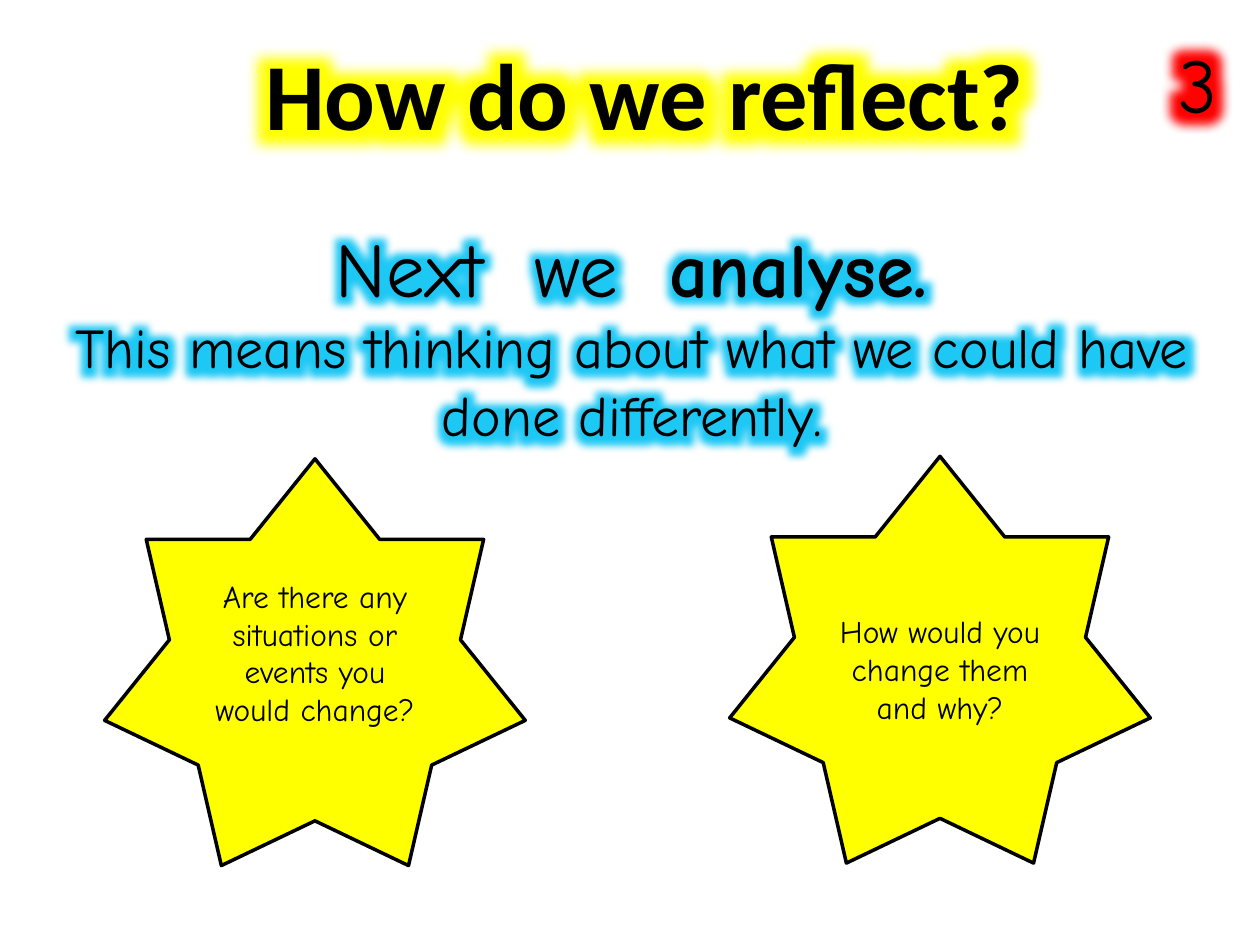
import pptx
import pptx.util
import pptx.dml.color
import pptx.enum.shapes
import pptx.enum.text
import pptx.oxml
import pptx.oxml.ns
from dataclasses import dataclass

Cm, Pt = pptx.util.Cm, pptx.util.Pt
RGB = pptx.dml.color.RGBColor.from_string
ALIGN = pptx.enum.text.PP_ALIGN
ANCHOR = pptx.enum.text.MSO_ANCHOR


@dataclass(frozen=True)
class Theme:
    ink: str = "000000"
    yellow: str = "FFFF00"
    red: str = "FF0000"
    blue: str = "1EC8F5"
    heading: str = "Calibri"
    body: str = "Comic Neue"
    title: int = 54
    large: int = 44
    medium: int = 32
    small: int = 18


T = Theme()


def add_run(p, text, size, font=T.body, bold=False, glow=None):
    """Add a formatted run; glow is a (colour, radius in points) pair."""
    r = p.add_run()
    r.text = text
    for name, value in {"size": Pt(size), "name": font, "bold": bold}.items():
        setattr(r.font, name, value)
    r.font.color.rgb = RGB(T.ink)
    if glow:
        colour, radius = glow
        effect = pptx.oxml.parse_xml(
            f'<a:effectLst {pptx.oxml.ns.nsdecls("a")}><a:glow rad="{Pt(radius)}">'
            f'<a:srgbClr val="{colour}"/></a:glow></a:effectLst>')
        fill = r.font._element.find(pptx.oxml.ns.qn("a:solidFill"))
        fill.addnext(effect)


prs = pptx.Presentation()
prs.slide_width, prs.slide_height = Cm(25.4), Cm(19.05)
s = prs.slides.add_slide(prs.slide_layouts[6])

# Glowing text: box, alignment, glow, then paragraphs of (text, size, font, bold)
text_boxes = [
    ((1.3, 0.61, 23.39, 2.57), ALIGN.CENTER, (T.yellow, 30),
     [[("How do we reflect?", T.title, T.heading, True)]]),
    ((23.5, 0.61, 1.22, 2.13), ALIGN.LEFT, (T.red, 28),
     [[("3", T.large, T.body, False)]]),
    ((0.08, 4.32, 25.32, 4.88), ALIGN.CENTER, (T.blue, 18),
     [[("Next  we  ", T.large, T.body, False),
       ("analyse.", T.large, T.body, True)],
      [("This means thinking about what we could have done differently.",
        T.medium, T.body, False)]]),
]
for box, align, glow, paragraphs in text_boxes:
    tf = s.shapes.add_textbox(*map(Cm, box)).text_frame
    tf.word_wrap = True
    for i, runs in enumerate(paragraphs):
        p = tf.add_paragraph() if i else tf.paragraphs[0]
        p.alignment = align
        for text, size, font, bold in runs:
            add_run(p, text, size, font, bold, glow)

# Question stars: left, top, top inset, text
stars = [
    (2.11, 9.25, 0.13, "Are there any situations or events you would change?"),
    (14.71, 9.2, 0.9, "How would you change them and why?"),
]
for left, top, inset, text in stars:
    sp = s.shapes.add_shape(pptx.enum.shapes.MSO_SHAPE.STAR_7_POINT,
                            Cm(left), Cm(top), Cm(8.48), Cm(8.2))
    sp.shadow.inherit = False
    sp.fill.solid()
    sp.fill.fore_color.rgb = RGB(T.yellow)
    sp.line.color.rgb = RGB(T.ink)
    sp.line.width = Pt(2)
    tf = sp.text_frame
    for name, value in {"word_wrap": True, "margin_top": Cm(inset),
                        "vertical_anchor": ANCHOR.MIDDLE}.items():
        setattr(tf, name, value)
    p = tf.paragraphs[0]
    p.alignment = ALIGN.CENTER
    add_run(p, text, T.small)

prs.save("out.pptx")
